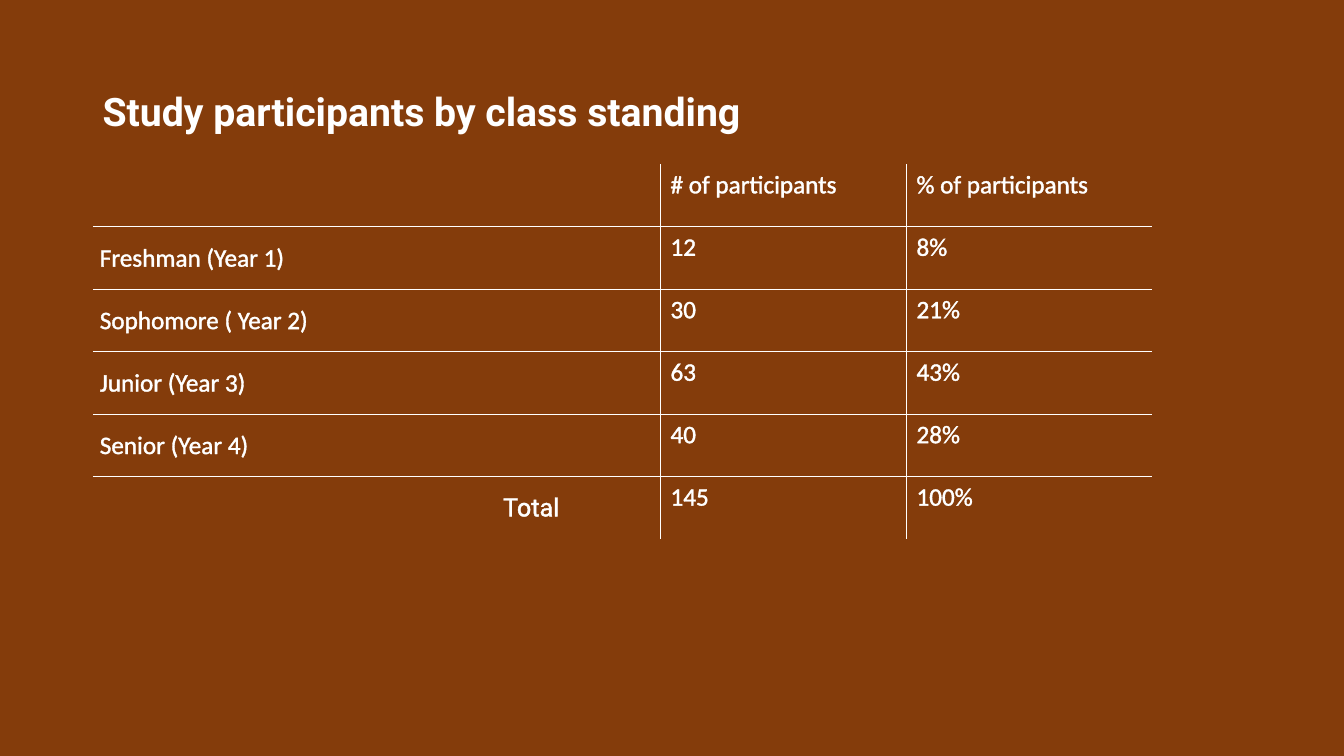
from lxml import etree
from pptx import Presentation
from pptx.dml.color import RGBColor
from pptx.enum.text import MSO_ANCHOR
from pptx.oxml.ns import qn
from pptx.util import Inches, Pt

MIDDLE, TOP = MSO_ANCHOR.MIDDLE, MSO_ANCHOR.TOP
BLANK = 6
NO_STYLE = "{2D5ABB26-0587-4C30-8999-92F81FD0307C}"

ROWS = [
    ("", "# of participants", "% of participants"),
    ("Freshman (Year 1)", "12", "8%"),
    ("Sophomore ( Year 2)", "30", "21%"),
    ("Junior (Year 3)", "63", "43%"),
    ("Senior (Year 4)", "40", "28%"),
    ("Total", "145", "100%"),
]
COL_WIDTHS = (5.63, 2.44, 2.44)
ROW_HEIGHT = 0.62


def rgb(color):
    return RGBColor.from_string(color)


def line(tag, color, width):
    ln = etree.Element(qn(tag), w=str(Pt(width)))
    fill = etree.SubElement(ln, qn("a:solidFill"))
    etree.SubElement(fill, qn("a:srgbClr"), val=color)
    return ln


def write(tf, text, font="Calibri", size=18, color="FFFFFF", bold=False,
          spacing=1.0, indent=0, outline=0):
    p = tf.paragraphs[0]
    p.line_spacing = spacing
    if indent:
        pPr = p._p.get_or_add_pPr()
        pPr.set("marL", str(Inches(indent)))
        pPr.set("indent", "0")
    r = p.add_run()
    r.text = text
    r.font.name = font
    r.font.size = Pt(size)
    r.font.bold = bold
    r.font.color.rgb = rgb(color)
    if outline:
        r._r.get_or_add_rPr().insert(0, line("a:ln", color, outline))


class Deck:
    ink = "FFFFFF"
    background = "843C0B"

    def __init__(self):
        self.prs = Presentation()
        self.prs.slide_width = Inches(13.33)
        self.prs.slide_height = Inches(7.5)
        self.s = self.prs.slides.add_slide(self.prs.slide_layouts[BLANK])
        fill = self.s.background.fill
        fill.solid()
        fill.fore_color.rgb = rgb(self.background)

    def title(self, text, x, y, w, h):
        sp = self.s.shapes.add_textbox(Inches(x), Inches(y), Inches(w), Inches(h))
        tf = sp.text_frame
        tf.word_wrap = True
        tf.vertical_anchor = MIDDLE
        write(tf, text, font="Roboto", size=28, color=self.ink, bold=True, spacing=0.9)

    def borders(self, cell, sides):
        tcPr = cell._tc.get_or_add_tcPr()
        for side, shown in sides.items():
            if shown:
                tcPr.append(line(f"a:ln{side}", self.ink, 1))

    def table(self, rows, x, y, col_widths, row_height):
        n_rows, n_cols = len(rows), len(col_widths)
        frame = self.s.shapes.add_table(
            n_rows, n_cols, Inches(x), Inches(y),
            Inches(sum(col_widths)), Inches(row_height * n_rows))
        table = frame.table
        table.first_row = table.horz_banding = False
        table._tbl.tblPr.find(qn("a:tableStyleId")).text = NO_STYLE
        for column, width in zip(table.columns, col_widths):
            column.width = Inches(width)
        for i, values in enumerate(rows):
            table.rows[i].height = Inches(row_height)
            for j, text in enumerate(values):
                cell = table.cell(i, j)
                is_label = j == 0 and i > 0
                is_total = is_label and i == n_rows - 1
                self.borders(cell, {"L": j > 0, "R": j < n_cols - 1,
                                    "T": i > 0, "B": i < n_rows - 1})
                cell.fill.background()
                cell.vertical_anchor = MIDDLE if is_label else TOP
                if is_label:
                    cell.margin_left = cell.margin_right = Inches(0.07)
                    cell.margin_top = cell.margin_bottom = 0
                write(cell.text_frame, text, color=self.ink, outline=0.75,
                      font="Roboto" if is_total else "Calibri",
                      indent=4 if is_total else 0)


def main():
    deck = Deck()
    deck.title("Study participants by class standing", 0.92, 0.4, 11.5, 1.45)
    deck.table(ROWS, 0.92, 1.63, COL_WIDTHS, ROW_HEIGHT)
    deck.prs.save("out.pptx")


if __name__ == "__main__":
    main()
